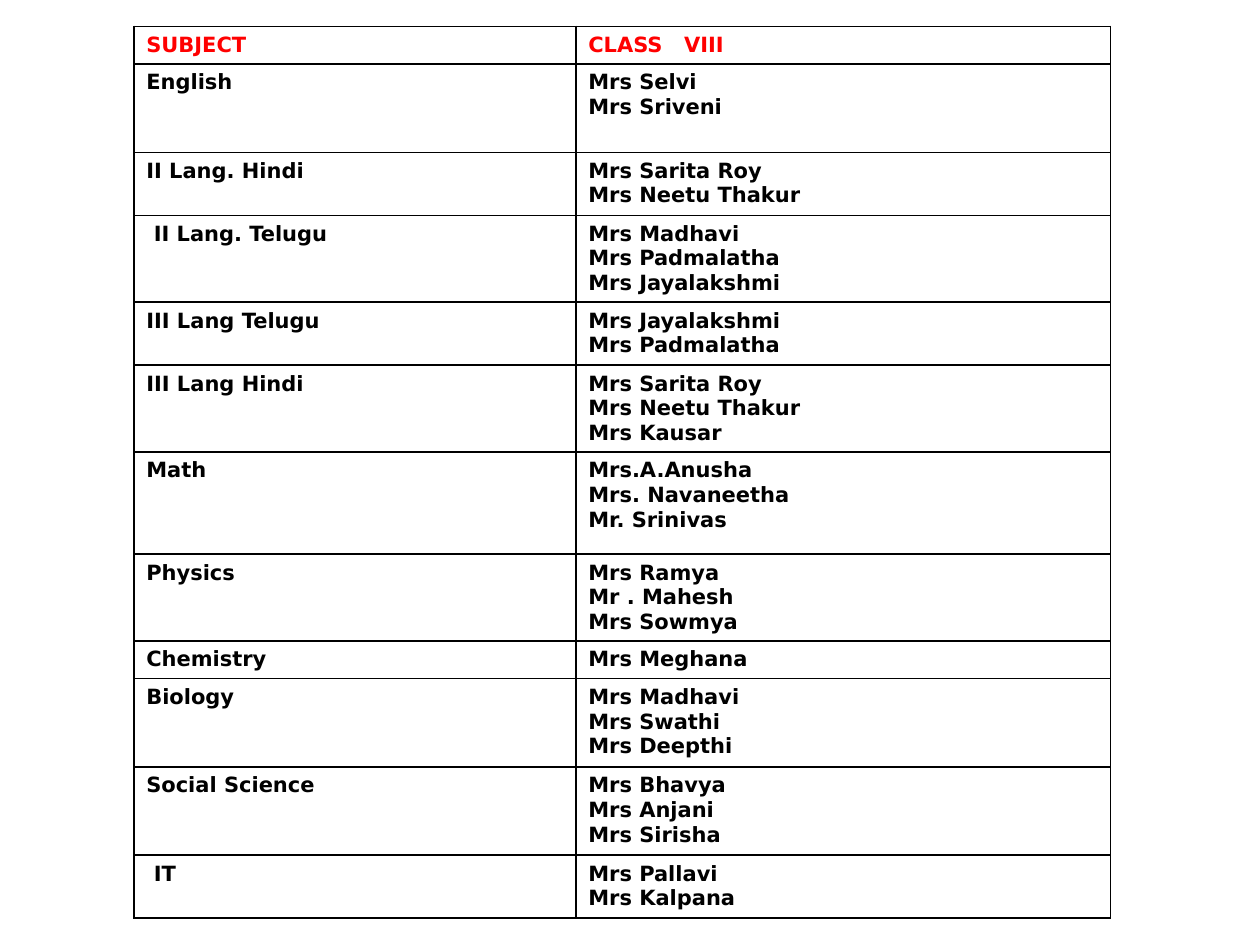
from lxml import etree
from pptx import Presentation
from pptx.dml.color import RGBColor
from pptx.enum.text import MSO_ANCHOR, PP_ALIGN
from pptx.oxml.ns import qn
from pptx.util import Cm, Pt

RED = RGBColor(0xFF, 0x00, 0x00)
BLACK = RGBColor(0x00, 0x00, 0x00)
TOP = MSO_ANCHOR.TOP
LEFT = PP_ALIGN.LEFT
FONT = "DejaVu Sans"
INDENT = 0.15

HEADER = ("SUBJECT", "CLASS\tVIII")
SUBJECTS = [
    ("English", ["Mrs Selvi", "Mrs Sriveni"], 1.78, 0),
    ("II Lang. Hindi", ["Mrs Sarita Roy", "Mrs Neetu Thakur"], 1.27, 0),
    ("II Lang. Telugu", ["Mrs Madhavi", "Mrs Padmalatha", "Mrs Jayalakshmi"], 1.75, INDENT),
    ("III Lang Telugu", ["Mrs Jayalakshmi", "Mrs Padmalatha"], 1.27, 0),
    ("III Lang Hindi", ["Mrs Sarita Roy", "Mrs Neetu Thakur", "Mrs Kausar"], 1.74, 0),
    ("Math", ["Mrs.A.Anusha", "Mrs. Navaneetha", "Mr. Srinivas"], 2.06, 0),
    ("Physics", ["Mrs Ramya", "Mr . Mahesh", "Mrs Sowmya"], 1.75, 0),
    ("Chemistry", ["Mrs Meghana"], 0.76, 0),
    ("Biology", ["Mrs Madhavi", "Mrs Swathi", "Mrs Deepthi"], 1.78, 0),
    ("Social Science", ["Mrs Bhavya", "Mrs Anjani", "Mrs Sirisha"], 1.78, 0),
    ("IT", ["Mrs Pallavi", "Mrs Kalpana"], 1.27, INDENT),
]


def add_text(tf, lines, color=BLACK, size=12, bold=True, indent=0, tab=None):
    """Write one paragraph per line with the given format."""
    for i, line in enumerate(lines):
        p = tf.paragraphs[0] if i == 0 else tf.add_paragraph()
        p.alignment = LEFT
        pPr = p._p.get_or_add_pPr()
        if indent:
            pPr.set("marL", str(Cm(indent)))
        if tab:
            tabs = etree.SubElement(pPr, qn("a:tabLst"))
            etree.SubElement(tabs, qn("a:tab"), pos=str(Cm(tab)), algn="l")
        r = p.add_run()
        r.text = line
        r.font.name = FONT
        r.font.size = Pt(size)
        r.font.bold = bold
        r.font.color.rgb = color


def set_borders(cell, color=BLACK, width=1):
    """Draw a solid line on each side of a cell."""
    tcPr = cell._tc.get_or_add_tcPr()
    for i, side in enumerate(("lnL", "lnR", "lnT", "lnB")):
        ln = etree.Element(qn(f"a:{side}"), w=str(Pt(width)))
        fill = etree.SubElement(ln, qn("a:solidFill"))
        etree.SubElement(fill, qn("a:srgbClr"), val=str(color))
        tcPr.insert(i, ln)


def fill_cell(cell, lines, **fmt):
    """Give a cell its text, margins and borders."""
    cell.fill.background()
    cell.vertical_anchor = TOP
    cell.margin_left = cell.margin_right = Cm(0.25)
    cell.margin_top = cell.margin_bottom = Cm(0.13)
    set_borders(cell)
    add_text(cell.text_frame, lines, **fmt)


def add_teacher_table(slide, left, top, width, header_height=0.76):
    """Place the table of subjects and teachers in the given box."""
    heights = [header_height] + [height for _, _, height, _ in SUBJECTS]
    table = slide.shapes.add_table(
        len(heights), 2, Cm(left), Cm(top), Cm(width), Cm(sum(heights))
    ).table
    table.first_row = table.horz_banding = False
    subject_width = round(width * 0.4525, 2)
    table.columns[0].width = Cm(subject_width)
    table.columns[1].width = Cm(width - subject_width)
    for row, height in zip(table.rows, heights):
        row.height = Cm(height)

    fill_cell(table.cell(0, 0), [HEADER[0]], color=RED)
    fill_cell(table.cell(0, 1), [HEADER[1]], color=RED, tab=1.93)
    for i, (subject, teachers, _, indent) in enumerate(SUBJECTS, start=1):
        fill_cell(table.cell(i, 0), [subject], indent=indent)
        fill_cell(table.cell(i, 1), teachers)


def main():
    """Build the slide and save it."""
    prs = Presentation()
    prs.slide_width, prs.slide_height = Cm(25.4), Cm(19.05)
    slide = prs.slides.add_slide(prs.slide_layouts[6])
    add_teacher_table(slide, left=2.7, top=0.53, width=19.69)
    prs.save("out.pptx")


if __name__ == "__main__":
    main()
